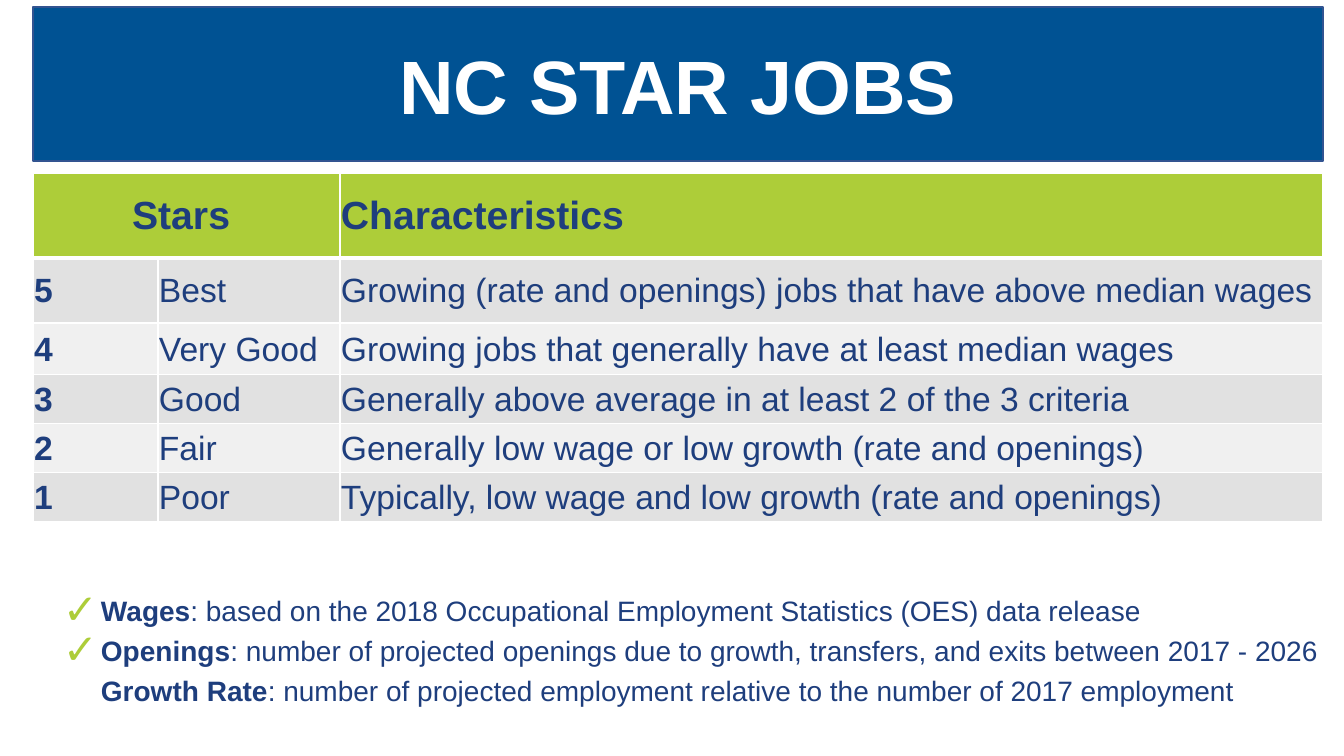
from lxml import etree
from pptx import Presentation
from pptx.dml.color import RGBColor
from pptx.enum.shapes import MSO_SHAPE
from pptx.enum.text import MSO_ANCHOR, PP_ALIGN
from pptx.oxml.ns import qn
from pptx.util import Pt

RECT = MSO_SHAPE.RECTANGLE
MIDDLE = MSO_ANCHOR.MIDDLE
LEFT, CENTER = PP_ALIGN.LEFT, PP_ALIGN.CENTER
SCALE = 914400 / 100.8
NAVY, BLUE, EDGE = "1E3E7D", "005293", "325491"
LIME, WHITE = "ADCD39", "FFFFFF"
BANDS = ("E1E1E1", "F0F0F0")

HEAD = ("Stars ", "", "Characteristics")
ROWS = (
    ("5", "Best", "Growing (rate and openings) jobs that have above median wages"),
    ("4", "Very Good", "Growing jobs that generally have at least median wages"),
    ("3", "Good", "Generally above average in at least 2 of the 3 criteria"),
    ("2", "Fair", "Generally low wage or low growth (rate and openings)"),
    ("1", "Poor", "Typically, low wage and low growth (rate and openings)"),
)
NOTES = (
    ("Wages", ": based on the 2018 Occupational Employment Statistics (OES) data release", True),
    ("Openings", ": number of projected openings due to growth, transfers, and exits between 2017 - 2026", True),
    ("Growth Rate", ": number of projected employment relative to the number of 2017 employment", False),
)


def px(n):
    return round(n * SCALE)


def color(code):
    return RGBColor.from_string(code)


def node(parent, tag, **attrs):
    item = etree.SubElement(parent, qn(tag))
    for name, value in attrs.items():
        item.set(name, str(value))
    return item


class Deck:
    font = "Arial"

    def __init__(self, width, height):
        self.file = Presentation()
        self.file.slide_width, self.file.slide_height = px(width), px(height)
        self.slide = self.file.slides.add_slide(self.file.slide_layouts[6])

    def run(self, para, text, size, ink=NAVY, bold=False):
        run = para.add_run()
        run.text = text
        run.font.name, run.font.size, run.font.bold = self.font, Pt(size), bold
        run.font.color.rgb = color(ink)

    def banner(self, text, *box):
        shape = self.slide.shapes.add_shape(RECT, *map(px, box))
        shape.shadow.inherit = False
        shape.fill.solid()
        shape.fill.fore_color.rgb = color(BLUE)
        shape.line.color.rgb = color(EDGE)
        shape.line.width = Pt(1)
        shape.text_frame.vertical_anchor = MIDDLE
        para = shape.text_frame.paragraphs[0]
        para.alignment = CENTER
        self.run(para, text, 54, WHITE, True)

    def border(self, cell, base):
        props = cell._tc.get_or_add_tcPr()
        for side, width in zip("LRTB", (1, 1, 1, base)):
            line = node(props, f"a:ln{side}", w=Pt(width))
            node(node(line, "a:solidFill"), "a:srgbClr", val=WHITE)

    def cell(self, cell, text, size, fill, bold, align=LEFT, base=1):
        self.border(cell, base)
        cell.fill.solid()
        cell.fill.fore_color.rgb = color(fill)
        cell.margin_left = cell.margin_right = cell.margin_top = px(1)
        cell.margin_bottom = 0
        cell.vertical_anchor = MIDDLE
        para = cell.text_frame.paragraphs[0]
        para.alignment = align
        if text:
            self.run(para, text, size, bold=bold)

    def table(self, left, top, widths, heights):
        grid = self.slide.shapes.add_table(
            len(heights), len(widths), px(left), px(top), px(sum(widths)), px(sum(heights))).table
        for col, width in zip(grid.columns, widths):
            col.width = px(width)
        for row, height in zip(grid.rows, heights):
            row.height = px(height)
        grid.cell(0, 0).merge(grid.cell(0, 1))
        for c, text in enumerate(HEAD):
            self.cell(grid.cell(0, c), text, 28, LIME, True, LEFT if c else CENTER, 3)
        for r, texts in enumerate(ROWS):
            for c, text in enumerate(texts):
                self.cell(grid.cell(r + 1, c), text, 24, BANDS[r % 2], c == 0)

    def notes(self, *box):
        frame = self.slide.shapes.add_textbox(*map(px, box)).text_frame
        frame.word_wrap = True
        frame.vertical_anchor = MIDDLE
        for i, (term, text, check) in enumerate(NOTES):
            para = frame.add_paragraph() if i else frame.paragraphs[0]
            para.line_spacing = 1.2
            props = para._p.get_or_add_pPr()
            props.set("marL", str(px(38)))
            props.set("indent", str(px(-38 if check else 0)))
            if check:
                node(node(props, "a:buClr"), "a:srgbClr", val=LIME)
                node(props, "a:buSzPct", val=150000)
                node(props, "a:buFont", typeface=self.font)
                node(props, "a:buChar", char="✓")
            else:
                node(props, "a:buNone")
            self.run(para, term, 20, bold=True)
            self.run(para, text, 20)


def main():
    deck = Deck(1344, 756)
    deck.notes(53, 557, 1281, 180)
    deck.table(33, 173, (125, 182, 983), (85, 65, 52, 49, 49, 49))
    deck.banner("NC STAR JOBS", 33, 7, 1290, 154)
    deck.file.save("out.pptx")


if __name__ == "__main__":
    main()
